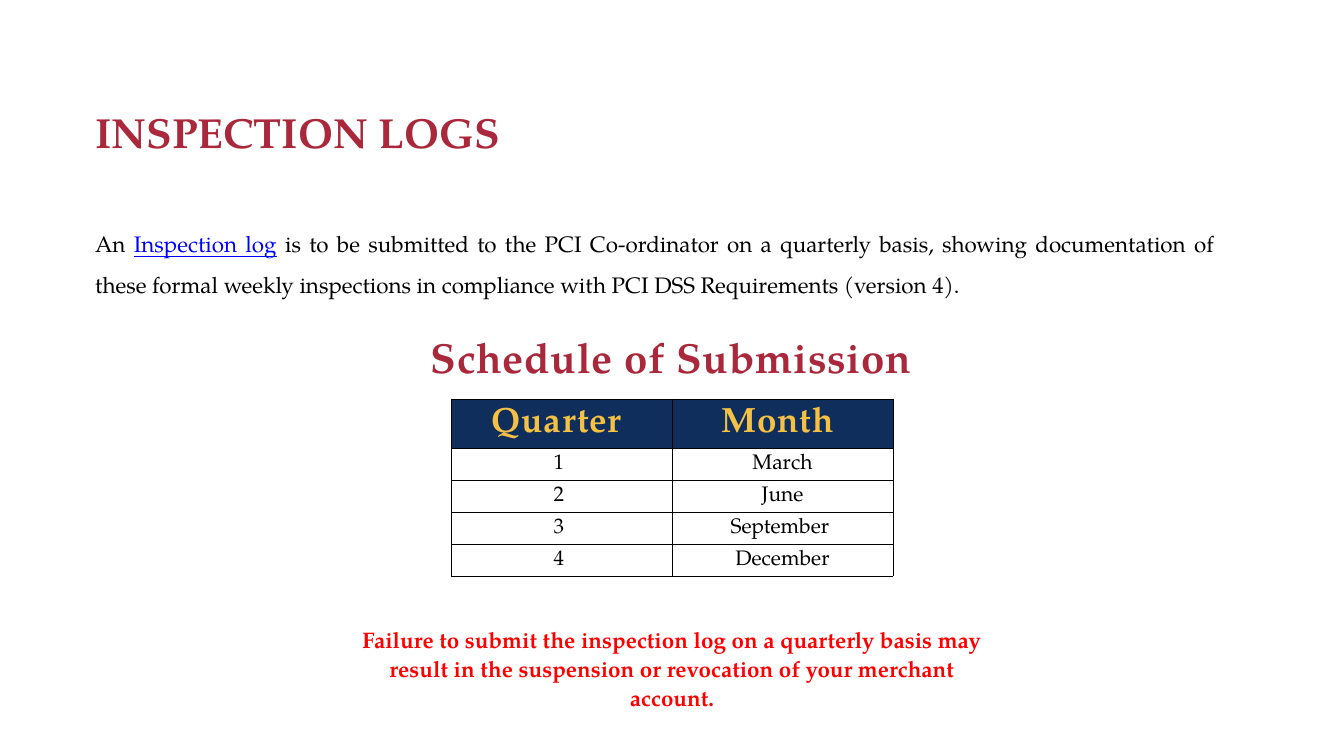
import pptx
import pptx.util
import pptx.dml.color
import pptx.enum.text
import pptx.oxml
import pptx.oxml.ns

# Content
TITLE = "INSPECTION LOGS"
INTRO = [
    ("An ", {}),
    ("Inspection log", {"color": "link", "underline": True}),
    (" is to be submitted to the PCI Co-ordinator on a quarterly basis, showing "
     "documentation of these formal weekly inspections in compliance with PCI DSS "
     "Requirements (version 4).", {}),
]
SCHEDULE_TITLE = "Schedule of Submission"
SCHEDULE = [
    ("Quarter ", "Month "),
    ("1 ", "March"),
    ("2 ", "June"),
    ("3 ", "September "),
    ("4 ", "December"),
]
WARNING = ("Failure to submit the inspection log on a quarterly basis may result in "
           "the suspension or revocation of your merchant account.")

# Theme
THEME = {
    "font": "TeX Gyre Pagella",
    "colors": {"heading": "A9283B", "text": "000000", "link": "0000FF",
               "warning": "FF0000", "header": "F4C145", "header_fill": "102E5C",
               "cell_fill": "FFFFFF", "border": "000000"},
    "sizes": {"heading": 60, "header": 50, "body": 32, "cell": 30},
}
SCALE = 914400 / 50.4
INSET = 3
ALIGN = pptx.enum.text.PP_ALIGN
ANCHOR = pptx.enum.text.MSO_ANCHOR


def px(*lengths):
    return [pptx.util.Emu(round(length * SCALE)) for length in lengths]


def color(name):
    return pptx.dml.color.RGBColor.from_string(THEME["colors"][name])


def write(frame, text, size="body", ink="text", bold=False, align=ALIGN.CENTER,
          line=1.08, tracking=0):
    """Fill a frame with one paragraph; text is a string or (text, format) spans."""
    para = frame.paragraphs[0]
    para.alignment, para.line_spacing = align, line
    para.space_before = pptx.util.Pt(0)
    for words, look in [(text, {})] if isinstance(text, str) else text:
        span = para.add_run()
        span.text = words
        span.font.name = THEME["font"]
        span.font.size = pptx.util.Pt(THEME["sizes"][size])
        span.font.bold = bold
        span.font.underline = look.get("underline", False)
        span.font.color.rgb = color(look.get("color", ink))
        if tracking:
            span.font._element.set("spc", str(tracking))


def place(box, area, anchor=ANCHOR.TOP, wrap=True):
    box.left, box.top, box.width, box.height = px(*area)
    frame = box.text_frame
    frame.word_wrap, frame.vertical_anchor = wrap, anchor
    frame.auto_size = pptx.enum.text.MSO_AUTO_SIZE.NONE
    (frame.margin_left, frame.margin_top,
     frame.margin_right, frame.margin_bottom) = px(*[INSET] * 4)
    return frame


def add_text(page, area, text, anchor=ANCHOR.TOP, wrap=True, **look):
    box = page.shapes.add_textbox(*px(*area))
    write(place(box, area, anchor, wrap), text, **look)


def add_borders(cell):
    properties = cell._tc.get_or_add_tcPr()
    widths = {"lnL": 0.5, "lnR": 0.5, "lnT": 0.75, "lnB": 0.75}
    for position, (side, width) in enumerate(widths.items()):
        properties.insert(position, pptx.oxml.parse_xml(
            f'<a:{side} {pptx.oxml.ns.nsdecls("a")} w="{pptx.util.Pt(width)}"><a:solidFill>'
            f'<a:srgbClr val="{THEME["colors"]["border"]}"/></a:solidFill></a:{side}>'))


def add_schedule(page, left, top, column_width, header_height, row_height):
    height = header_height + row_height * (len(SCHEDULE) - 1)
    columns = len(SCHEDULE[0])
    table = page.shapes.add_table(len(SCHEDULE), columns,
                                  *px(left, top, column_width * columns, height)).table
    for column in table.columns:
        column.width = px(column_width)[0]
    for index, values in enumerate(SCHEDULE):
        header = index == 0
        table.rows[index].height = px(header_height if header else row_height)[0]
        for cell, value in zip(table.rows[index].cells, values):
            cell.vertical_anchor = ANCHOR.MIDDLE
            (cell.margin_left, cell.margin_top,
             cell.margin_right, cell.margin_bottom) = px(*[INSET] * 4)
            cell.fill.solid()
            cell.fill.fore_color.rgb = color("header_fill" if header else "cell_fill")
            write(cell.text_frame, value, size="header" if header else "cell",
                  ink="header" if header else "text", bold=header,
                  tracking=100 if header else 0)
            add_borders(cell)


def main():
    deck = pptx.Presentation()
    deck.slide_width, deck.slide_height = px(1344, 756)
    page = deck.slides.add_slide(deck.slide_layouts[5])

    # Title and introduction
    write(place(page.shapes.title, (92, 99, 1126, 62)), TITLE, size="heading",
          ink="heading", bold=True, align=ALIGN.JUSTIFY)
    add_text(page, (92, 214, 1126, 90), INTRO, align=ALIGN.JUSTIFY, line=1.5)

    # Submission schedule
    add_text(page, (435, 331, 473, 48), SCHEDULE_TITLE, anchor=ANCHOR.MIDDLE, wrap=False,
             size="heading", ink="heading", bold=True, tracking=100)
    add_schedule(page, 451, 399, 221, 49, 32)

    # Warning
    add_text(page, (354, 621, 636, 94), WARNING, ink="warning", bold=True)

    deck.save("out.pptx")


if __name__ == "__main__":
    main()
